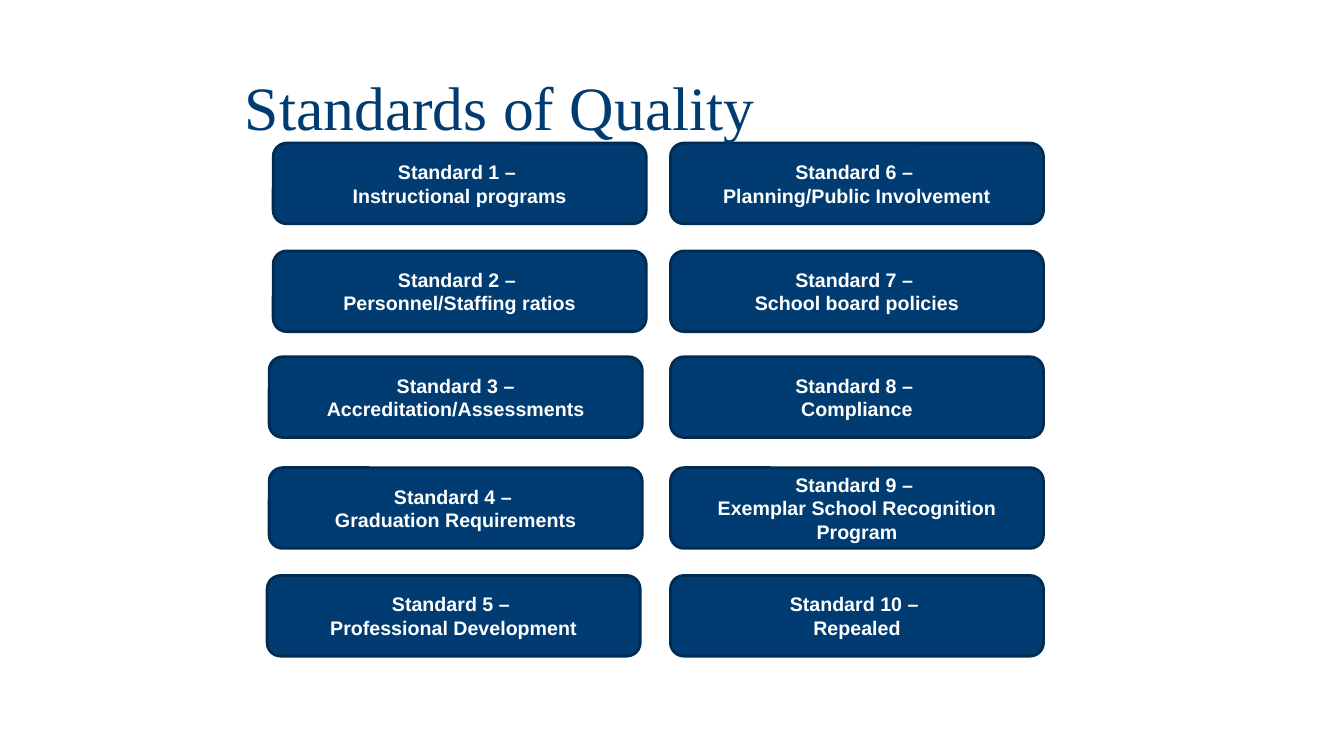
from pptx import Presentation
from pptx.dml.color import RGBColor
from pptx.enum import shapes, text
from pptx.util import Inches, Pt


def color(value):
    return RGBColor.from_string(value)


NAVY = "003C71"
DARK_NAVY = "002C54"
WHITE = "FFFFFF"

standards = [
    "Standard 1 – \nInstructional programs",
    "Standard 2 – \nPersonnel/Staffing ratios",
    "Standard 3 – Accreditation/Assessments",
    "Standard 4 – \nGraduation Requirements",
    "Standard 5 – \nProfessional Development",
    "Standard 6 – \nPlanning/Public Involvement",
    "Standard 7 – \nSchool board policies",
    "Standard 8 – \nCompliance",
    "Standard 9 – \nExemplar School Recognition Program",
    "Standard 10 – \nRepealed",
]
row_tops = [1.42, 2.49, 3.54, 4.64, 5.71]
left_column = [2.71, 2.71, 2.67, 2.67, 2.65]
right_column = [6.65] * 5

prs = Presentation()
prs.slide_width = Inches(13.33)
prs.slide_height = Inches(7.5)
s = prs.slides.add_slide(prs.slide_layouts[6])

for label, left, top in zip(standards, left_column + right_column, row_tops * 2):
    sp = s.shapes.add_shape(
        shapes.MSO_SHAPE.ROUNDED_RECTANGLE,
        Inches(left), Inches(top), Inches(3.7), Inches(0.8),
    )
    sp.shadow.inherit = False
    sp.fill.solid()
    sp.fill.fore_color.rgb = color(NAVY)
    sp.line.color.rgb = color(DARK_NAVY)
    sp.line.width = Pt(2)
    tf = sp.text_frame
    tf.word_wrap = True
    tf.vertical_anchor = text.MSO_ANCHOR.MIDDLE
    tf.text = label
    for p in tf.paragraphs:
        p.alignment = text.PP_ALIGN.CENTER
        for r in p.runs:
            r.font.name = "Arial"
            r.font.size = Pt(14)
            r.font.bold = True
            r.font.color.rgb = color(WHITE)

title = s.shapes.add_textbox(Inches(2.33), Inches(0.37), Inches(10.05), Inches(1.45))
tf = title.text_frame
tf.word_wrap = True
tf.vertical_anchor = text.MSO_ANCHOR.MIDDLE
tf.text = "Standards of Quality"
p = tf.paragraphs[0]
p.line_spacing = 0.9
r = p.runs[0]
r.font.name = "Times New Roman"
r.font.size = Pt(44)
r.font.color.rgb = color(NAVY)

prs.save("out.pptx")
